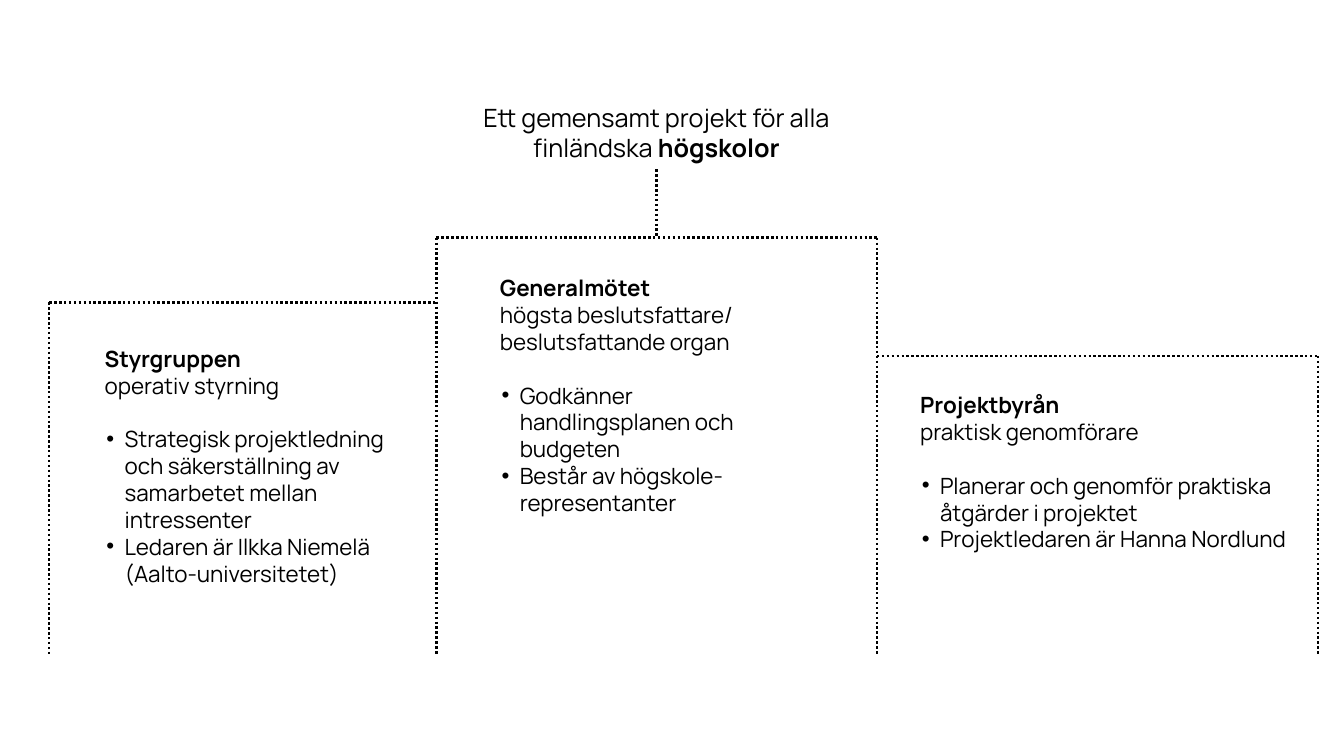
from lxml import etree
from pptx import Presentation
from pptx.dml.color import RGBColor
from pptx.enum.dml import MSO_LINE
from pptx.enum.shapes import MSO_CONNECTOR
from pptx.enum.text import PP_ALIGN
from pptx.oxml.ns import qn
from pptx.util import Cm, Pt

STRAIGHT = MSO_CONNECTOR.STRAIGHT
DOTTED = MSO_LINE.ROUND_DOT
CENTER = PP_ALIGN.CENTER
BLACK = RGBColor(0, 0, 0)
FONT = "Manrope"
HEADING_SIZE = 18
BODY_SIZE = 16
BLANK_LINE = Pt(19.2)
COLUMN_BOTTOM = 16.51

COLUMNS = [
    {"box": (1.24, 7.62, 9.76), "sides": ("left",), "text": (1.4, 1.07, 7.67),
     "title": "Styrgruppen", "role": ["operativ styrning"],
     "duties": ["Strategisk projektledning och säkerställning av samarbetet mellan intressenter",
                "Ledaren är Ilkka Niemelä (Aalto-universitetet)"]},
    {"box": (11, 5.99, 11.1), "sides": ("left", "right"), "text": (1.6, 0.92, 7.67),
     "title": "Generalmötet", "role": ["högsta beslutsfattare/", "beslutsfattande organ"],
     "duties": ["Godkänner handlingsplanen och budgeten",
                "Består av högskole-representanter"]},
    {"box": (22.1, 8.97, 11.12), "sides": ("right",), "text": (1.09, 0.89, 9.42),
     "title": "Projektbyrån", "role": ["praktisk genomförare"],
     "duties": ["Planerar och genomför praktiska åtgärder i projektet",
                "Projektledaren är Hanna Nordlund"]},
]


def add_dotted_line(slide, start, end):
    """Draw a dotted line between two points given in centimetres."""
    line = slide.shapes.add_connector(STRAIGHT, *(Cm(length) for length in start + end))
    line.line.color.rgb = BLACK
    line.line.width = Pt(1.75)
    line.line.dash_style = DOTTED
    etree.SubElement(line._element.spPr, qn("a:effectLst"))


def add_text_frame(slide, left, top, width, height):
    """Add a wrapping text box without margins and return its text frame."""
    box = slide.shapes.add_textbox(Cm(left), Cm(top), Cm(width), Cm(height))
    frame = box.text_frame
    frame.word_wrap = True
    frame.margin_left = frame.margin_top = frame.margin_right = frame.margin_bottom = 0
    return frame


def add_run(paragraph, text, size, bold=False):
    """Append a styled run to a paragraph."""
    run = paragraph.add_run()
    run.text = text
    run.font.name = FONT
    run.font.size = Pt(size)
    run.font.bold = bold
    run.font.color.rgb = BLACK


def add_bullet(paragraph):
    """Give a paragraph a round bullet with a hanging indent."""
    properties = paragraph._p.get_or_add_pPr()
    properties.set("marL", str(Cm(0.5)))
    properties.set("indent", str(Cm(-0.46)))
    etree.SubElement(properties, qn("a:buFont"), typeface="Arial")
    etree.SubElement(properties, qn("a:buChar"), char="•")


def add_heading(slide, left, top, width):
    """Place the centred heading and the stem that leads down to the columns."""
    paragraph = add_text_frame(slide, left, top, width, 1.55).paragraphs[0]
    paragraph.alignment = CENTER
    add_run(paragraph, "Ett gemensamt projekt för alla finländska ", HEADING_SIZE)
    add_run(paragraph, "högskolor", HEADING_SIZE, bold=True)
    middle = left + width / 2
    add_dotted_line(slide, (middle, top + 1.7), (middle, top + 3.42))


def add_column(slide, column):
    """Place one open-bottomed frame with its title, role and duties."""
    left, top, width = column["box"]
    edges = {"left": left, "right": left + width}
    add_dotted_line(slide, (left, top), (left + width, top))
    for side in column["sides"]:
        add_dotted_line(slide, (edges[side], top), (edges[side], COLUMN_BOTTOM))

    text_left, text_top, text_width = column["text"]
    frame = add_text_frame(slide, left + text_left, top + text_top, text_width, 6.2)
    paragraph = frame.paragraphs[0]
    add_run(paragraph, column["title"], BODY_SIZE, bold=True)
    for line in column["role"]:
        paragraph.add_line_break()
        add_run(paragraph, line, BODY_SIZE)
    for index, duty in enumerate(column["duties"]):
        paragraph = frame.add_paragraph()
        add_bullet(paragraph)
        paragraph.space_before = Pt(0) if index else BLANK_LINE
        add_run(paragraph, duty, BODY_SIZE)


def main():
    """Build the slide and save it."""
    presentation = Presentation()
    presentation.slide_width = Cm(33.87)
    presentation.slide_height = Cm(19.05)
    slide = presentation.slides.add_slide(presentation.slide_layouts[6])
    add_heading(slide, 11.2, 2.57, 10.69)
    for column in COLUMNS:
        add_column(slide, column)
    presentation.save("out.pptx")


if __name__ == "__main__":
    main()
